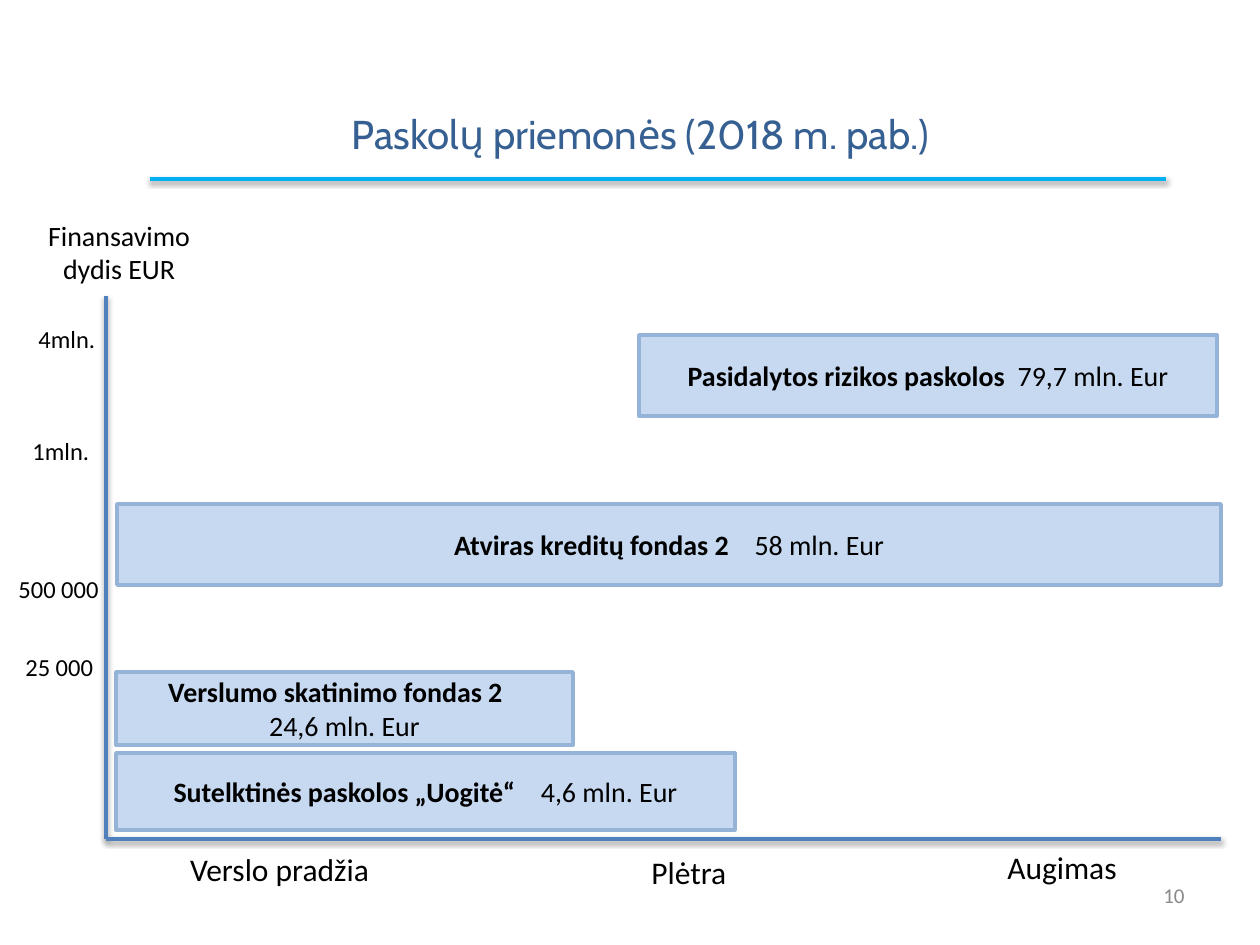
from dataclasses import dataclass

from lxml import etree
from pptx import Presentation
from pptx.dml.color import RGBColor
from pptx.enum.shapes import MSO_CONNECTOR, MSO_SHAPE
from pptx.enum.text import MSO_ANCHOR, PP_ALIGN
from pptx.oxml.ns import qn
from pptx.util import Pt

PX = 914400 / 126
LEFT, CENTER, RIGHT = PP_ALIGN.LEFT, PP_ALIGN.CENTER, PP_ALIGN.RIGHT
TOP, MIDDLE = MSO_ANCHOR.TOP, MSO_ANCHOR.MIDDLE
RECT, STRAIGHT = MSO_SHAPE.RECTANGLE, MSO_CONNECTOR.STRAIGHT


@dataclass(frozen=True)
class Theme:
    head: str = "376092"
    rule: str = "00B0F0"
    axis: str = "4F81BD"
    fill: str = "C6D9F1"
    edge: str = "95B3D7"
    ink: str = "000000"
    page: str = "898989"
    title: int = 23
    stage: int = 18
    body: int = 16
    tick: int = 14
    small: int = 12
    line: int = 2


THEME = Theme()


def px(*vals):
    return [round(v * PX) for v in vals]


def shift(box, part):
    """Turn a part's place relative to box into one on the slide."""
    return [part[0] + box[0], part[1] + box[1], *part[2:]]


def add_run(par, text, size=THEME.body, color=THEME.ink, name="Calibri", bold=False):
    run = par.add_run()
    run.text = text
    form = {"size": Pt(size), "name": name, "bold": bold}
    for key, val in form.items():
        setattr(run.font, key, val)
    run.font.color.rgb = RGBColor.from_string(color)
    return run


def add_text(slide, box, text, align=LEFT, anchor=TOP, **form):
    frame = slide.shapes.add_textbox(*px(*box)).text_frame
    frame.word_wrap = True
    frame.vertical_anchor = anchor
    par = frame.paragraphs[0]
    par.alignment = align
    add_run(par, text, **form)


def add_line(slide, start, end, color):
    """Draw a straight line with a soft shadow below it."""
    line = slide.shapes.add_connector(STRAIGHT, *px(*start, *end))
    line.line.color.rgb = RGBColor.from_string(color)
    line.line.width = Pt(THEME.line)
    effect = etree.SubElement(line._element.spPr, qn("a:effectLst"))
    shade = etree.SubElement(effect, qn("a:outerShdw"), blurRad=str(Pt(3.1)),
                             dist=str(Pt(1.6)), dir="5400000", rotWithShape="0")
    black = etree.SubElement(shade, qn("a:srgbClr"), val=THEME.ink)
    etree.SubElement(black, qn("a:alpha"), val="38000")


def add_bar(slide, box, name, sum_, gap):
    """Draw a fund's bar; gap is the points between name and sum, 0 for two lines."""
    bar = slide.shapes.add_shape(RECT, *px(*box))
    bar.shadow.inherit = False
    bar.fill.solid()
    bar.fill.fore_color.rgb = RGBColor.from_string(THEME.fill)
    bar.line.color.rgb = RGBColor.from_string(THEME.edge)
    bar.line.width = Pt(THEME.line)
    frame = bar.text_frame
    frame.word_wrap = True
    frame.vertical_anchor = MIDDLE
    par = frame.paragraphs[0]
    par.alignment = CENTER
    add_run(par, name, bold=True)
    if gap:
        space = add_run(par, " ", bold=True)
        space.font._element.set("spc", str(round(gap * 100)))
    else:
        par._p.get_or_add_pPr().set("marR", str(px(18)[0]))
        par = frame.add_paragraph()
        par.alignment = CENTER
        par._p.get_or_add_pPr().set("marR", "0")
    add_run(par, sum_)


def add_head(slide, box):
    add_text(slide, box, "Paskolų priemonės (2018 m. pab.)", CENTER, MIDDLE,
             size=THEME.title, color=THEME.head, name="Cabin")
    add_line(slide, shift(box, (139, 122)), shift(box, (1155, 122)), THEME.rule)


def add_axes(slide, box):
    wide, high = box[2:]
    add_line(slide, shift(box, (0, 0)), shift(box, (0, high)), THEME.axis)
    add_line(slide, shift(box, (0, high)), shift(box, (wide, high)), THEME.axis)
    add_text(slide, shift(box, (-77, -84, 180, 81)), "Finansavimo dydis EUR", CENTER)
    ticks = [("4mln.", -80, 22, 84), ("1mln.", -86, 134, 84),
             ("500 000", -100, 272, 122), ("25 000", -93, 350, 98)]
    for text, x, y, w in ticks:
        add_text(slide, shift(box, (x, y, w, 43)), text, size=THEME.tick)
    stages = [("Verslo pradžia", -30, 5, 407, CENTER), ("Plėtra", 533, 8, 202, LEFT),
              ("Augimas", 889, 3, 202, LEFT)]
    for text, x, y, w, align in stages:
        add_text(slide, shift(box, (x, high + y, w, 50)), text, align, size=THEME.stage)


def add_funds(slide, box):
    funds = [((533, 39, 578, 81), "Pasidalytos rizikos paskolos", "79,7 mln. Eur", 3.6),
             ((11, 208, 1104, 81), "Atviras kreditų fondas 2", "58 mln. Eur", 10.9),
             ((10, 376, 457, 73), "Verslumo skatinimo fondas 2", "24,6 mln. Eur", 0),
             ((10, 457, 619, 77), "Sutelktinės paskolos „Uogitė“", "4,6 mln. Eur", 10.9)]
    for part, *texts in funds:
        add_bar(slide, shift(box, part), *texts)


def add_page(slide, box):
    add_text(slide, box, "10", RIGHT, size=THEME.small, color=THEME.page)


def main():
    deck = Presentation()
    deck.slide_width, deck.slide_height = px(1260, 945)
    slide = deck.slides.add_slide(deck.slide_layouts[6])
    plot = (106, 296, 1115, 543)
    add_head(slide, (11, 57, 1260, 152))
    add_axes(slide, plot)
    add_funds(slide, plot)
    add_page(slide, (903, 876, 294, 50))
    deck.save("out.pptx")


if __name__ == "__main__":
    main()
